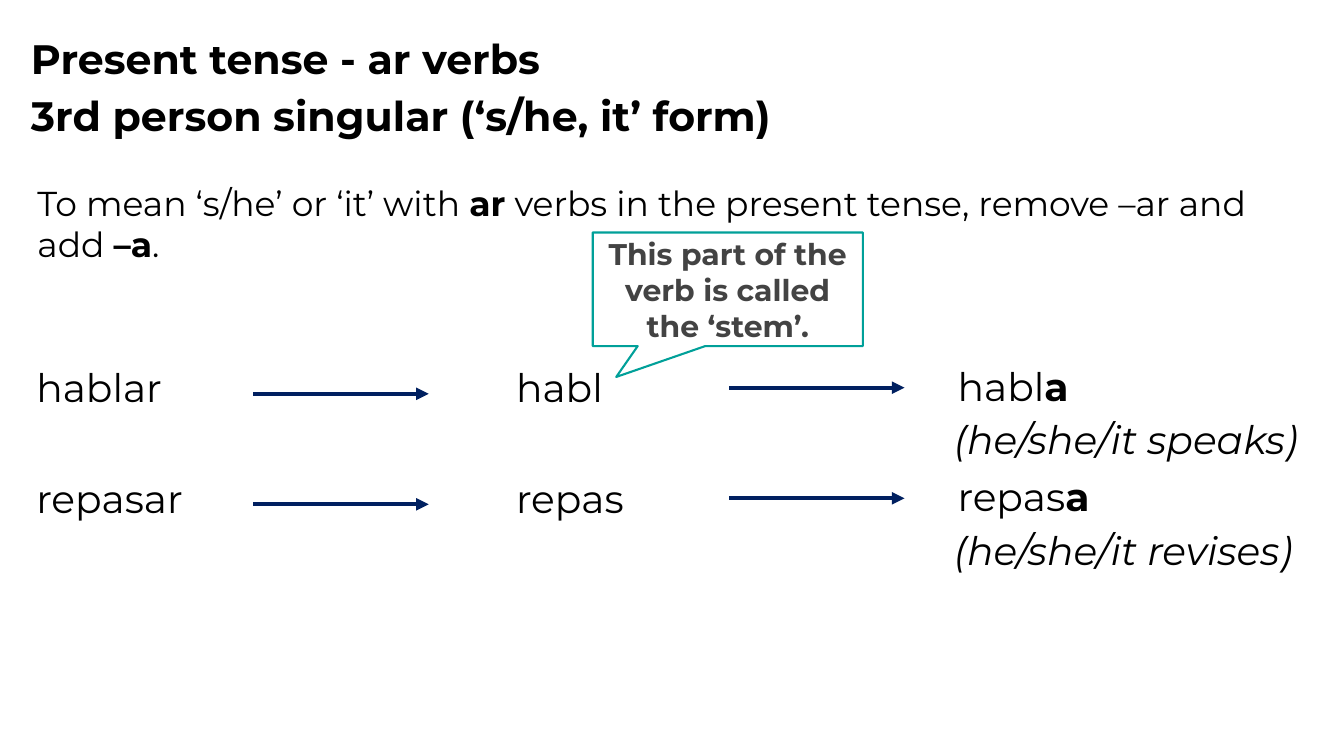
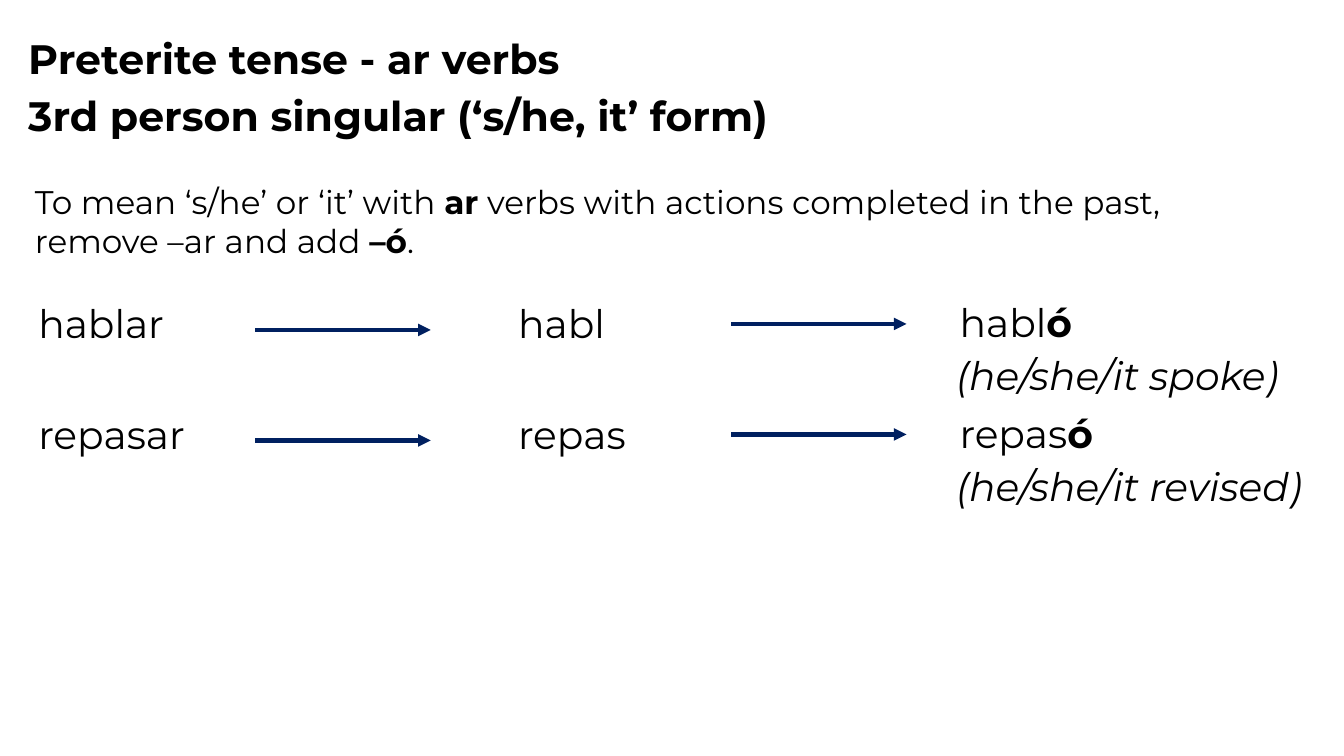
"""Build two slides on the third person singular of Spanish -ar verbs."""
from lxml import etree
from pptx import Presentation
from pptx import util as u
from pptx.dml.color import RGBColor
from pptx.enum import shapes, text
from pptx.oxml.ns import qn

COLOURS = {"ink": "000000", "arrow": "002060", "teal": "00A099", "grey": "434343", "paper": "FFFFFF"}
FONT = "Montserrat"
ROW_STEP = 1.645


def write(frame, wording, size=42, colour="ink", bold=False, italic=False,
          align=text.PP_ALIGN.LEFT, anchor=text.MSO_ANCHOR.TOP, spacing=None, inset=(0.15, 0.07)):
    """Fill a text frame; asterisks enclose bold words and line breaks part paragraphs."""
    frame.word_wrap = True
    frame.auto_size = text.MSO_AUTO_SIZE.NONE
    frame.vertical_anchor = anchor
    frame.margin_left = frame.margin_right = u.Inches(inset[0])
    frame.margin_top = frame.margin_bottom = u.Inches(inset[1])
    for number, line in enumerate(wording.split("\n")):
        paragraph = frame.paragraphs[0] if number == 0 else frame.add_paragraph()
        paragraph.alignment = align
        paragraph.line_spacing = spacing
        for position, part in enumerate(line.split("*")):
            if part:
                run = paragraph.add_run()
                run.text = part
                run.font.name = FONT
                run.font.size = u.Pt(size)
                run.font.bold = bold or position % 2 == 1
                run.font.italic = italic
                run.font.color.rgb = RGBColor.from_string(COLOURS[colour])


def draw_arrow(slide, left, top):
    """Draw one horizontal arrow between two verb forms."""
    arrow = slide.shapes.add_connector(
        shapes.MSO_CONNECTOR.STRAIGHT, *map(u.Inches, (left, top, left + 2.61, top)))
    arrow.line.width = u.Pt(4.5)
    arrow.line.color.rgb = RGBColor.from_string(COLOURS["arrow"])
    etree.SubElement(arrow.line._get_or_add_ln(), qn("a:tailEnd"), type="triangle")
    etree.SubElement(arrow._element.spPr, qn("a:effectLst"))


lessons = [
    dict(tense="Present", title_left=0.46, left=0.39, top=5.34, rule_size=37, rule_width=19.14,
         rule="To mean ‘s/he’ or ‘it’ with *ar* verbs in the present tense, remove –ar and add *–a*.",
         ending="a", meanings=[("speaks", 5.95), ("revises", 5.55)], stem_note=True),
    dict(tense="Preterite", title_left=0.42, left=0.42, top=4.39, rule_size=35, rule_width=18.85,
         rule="To mean ‘s/he’ or ‘it’ with *ar* verbs with actions completed in the past, "
              "remove –ar and add *–ó*.",
         ending="ó", meanings=[("spoke", 5.25), ("revised", 5.92)], stem_note=False),
]

deck = Presentation()
deck.slide_width, deck.slide_height = u.Inches(20), u.Inches(11.25)

for lesson in lessons:
    slide = deck.slides.add_slide(deck.slide_layouts[5])
    slide.background.fill.solid()
    slide.background.fill.fore_color.rgb = RGBColor.from_string(COLOURS["paper"])

    heading = slide.shapes.title
    heading.left, heading.top, heading.width, heading.height = map(
        u.Inches, (lesson["title_left"], 0.39, 18.38, 1.78))
    write(heading.text_frame, f"{lesson['tense']} tense - ar verbs\n3rd person singular (‘s/he, it’ form)",
          size=44, bold=True, spacing=1.15, inset=(0, 0))

    rule = slide.shapes.add_textbox(*map(u.Inches, (lesson["title_left"], 2.66, lesson["rule_width"], 0.8)))
    write(rule.text_frame, lesson["rule"], size=lesson["rule_size"], inset=(0.1, 0.05))

    if lesson["stem_note"]:
        stem_note = slide.shapes.add_shape(
            shapes.MSO_SHAPE.ROUNDED_RECTANGULAR_CALLOUT, *map(u.Inches, (8.82, 3.46, 4.02, 1.69)))
        for index, value in enumerate((-0.413, 0.772, 0)):
            stem_note.adjustments[index] = value
        stem_note.shadow.inherit = False
        stem_note.fill.solid()
        stem_note.fill.fore_color.rgb = RGBColor.from_string(COLOURS["paper"])
        stem_note.line.color.rgb = RGBColor.from_string(COLOURS["teal"])
        stem_note.line.width = u.Pt(2.25)
        write(stem_note.text_frame, "This part of the verb is called the ‘stem’.", size=32, colour="grey",
              bold=True, align=text.PP_ALIGN.CENTER, anchor=text.MSO_ANCHOR.MIDDLE, inset=(0.1, 0.05))

    left = lesson["left"]
    for row, (stem, (meaning, meaning_width)) in enumerate(zip(("habl", "repas"), lesson["meanings"])):
        top = lesson["top"] + row * ROW_STEP
        for wording, offset, drop, width, italic in (
            (f"{stem}ar", 0, 0, 3.59, False),
            (stem, 7.14, 0, 2.86, False),
            (f"{stem}*{lesson['ending']}*", 13.71, -0.02, 4.41, False),
            (f"(he/she/it {meaning})", 13.66, 0.77, meaning_width, True),
        ):
            form = slide.shapes.add_textbox(*map(u.Inches, (left + offset, top + drop, width, 0.85)))
            write(form.text_frame, wording, italic=italic)
        draw_arrow(slide, left + 3.38, top + 0.52)
        draw_arrow(slide, left + 10.46, top + 0.43)

deck.save("out.pptx")
